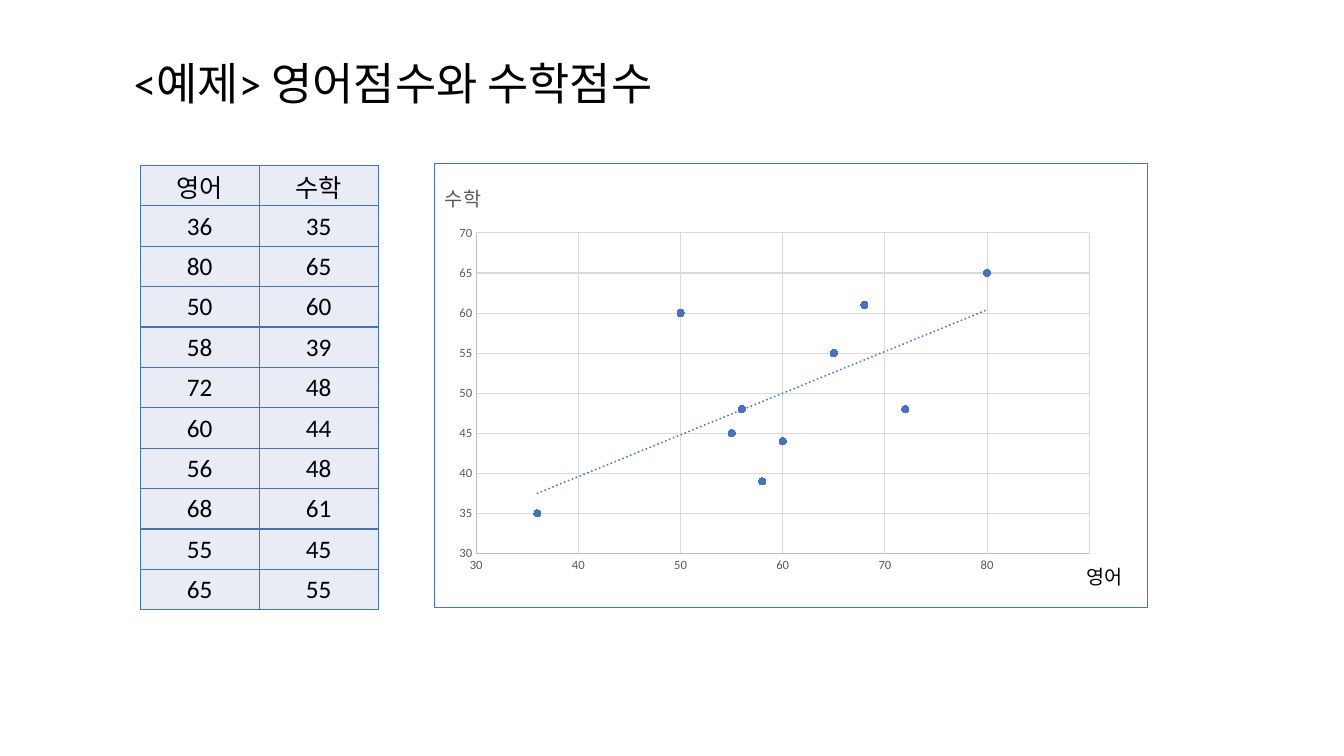
from lxml.etree import SubElement
from pptx import Presentation
from pptx.chart.data import XyChartData
from pptx.dml.color import RGBColor
from pptx.enum.chart import XL_CHART_TYPE, XL_MARKER_STYLE, XL_TICK_MARK
from pptx.enum.shapes import MSO_SHAPE
from pptx.enum.text import MSO_ANCHOR, PP_ALIGN
from pptx.oxml import parse_xml
from pptx.oxml.ns import nsdecls, qn
from pptx.util import Inches, Pt

COLORS = {"blue": "4472C4", "pale": "E9EBF5", "grid": "D9D9D9", "axis": "BFBFBF",
          "gray": "595959", "black": "000000", "white": "FFFFFF"}
HEADS = ["영어", "수학"]
SCORES = [(36, 35), (80, 65), (50, 60), (58, 39), (72, 48),
          (60, 44), (56, 48), (68, 61), (55, 45), (65, 55)]


def style(font, size, color="black", name="Calibri"):
    font.size, font.name, font.bold = Pt(size), name, False
    font.color.rgb = RGBColor.from_string(COLORS[color])


def place(parent, index, **sizes):
    """Give a chart part a manual layout, as fractions of the chart."""
    for old in parent.findall(qn("c:layout")):
        parent.remove(old)
    layout = parent.makeelement(qn("c:layout"))
    manual = SubElement(layout, qn("c:manualLayout"))
    if "w" in sizes:
        SubElement(manual, qn("c:layoutTarget")).set("val", "inner")
    for mode in ("xMode", "yMode"):
        SubElement(manual, qn(f"c:{mode}")).set("val", "edge")
    for key, value in sizes.items():
        SubElement(manual, qn(f"c:{key}")).set("val", str(value))
    parent.insert(index, layout)


deck = Presentation()
deck.slide_width, deck.slide_height = Inches(13.33), Inches(7.5)
slide = deck.slides.add_slide(deck.slide_layouts[6])
shapes = slide.shapes

# Title
frame = shapes.add_textbox(Inches(1.23), Inches(0.4), Inches(8.98), Inches(0.91)).text_frame
frame.word_wrap = True
frame.vertical_anchor = MSO_ANCHOR.MIDDLE
title = frame.paragraphs[0]
title.text = "<예제> 영어점수와 수학점수"
title.line_spacing = 0.9
style(title.font, 32)

# Score table
rows = [HEADS, *SCORES]
table = shapes.add_table(len(rows), 2, Inches(1.39), Inches(1.64),
                         Inches(2.36), Inches(4.41)).table
table.first_row = table.horz_banding = False
for row, values in enumerate(rows):
    for col, value in enumerate(values):
        cell = table.cell(row, col)
        cell.margin_left = cell.margin_right = cell.margin_top = Inches(0.01)
        cell.margin_bottom = 0
        cell.vertical_anchor = MSO_ANCHOR.MIDDLE
        para = cell.text_frame.paragraphs[0]
        para.text = str(value)
        para.alignment = PP_ALIGN.CENTER
        style(para.font, 18)
        props = cell._tc.get_or_add_tcPr()
        for side in "LRTB":
            edge = SubElement(props, qn(f"a:ln{side}"), w=str(Pt(1)))
            paint = SubElement(edge, qn("a:solidFill"))
            SubElement(paint, qn("a:srgbClr"), val=COLORS["blue"])
        cell.fill.solid()
        cell.fill.fore_color.rgb = RGBColor.from_string(COLORS["pale"])

# Scatter chart
data = XyChartData()
points = data.add_series("수학")
for english, math in SCORES:
    points.add_data_point(english, math)
chart = shapes.add_chart(XL_CHART_TYPE.XY_SCATTER, Inches(4.3), Inches(1.62),
                         Inches(7.09), Inches(4.41), data).chart
style(chart.font, 10)
chart.has_legend = False
chart.has_title = True
head = chart.chart_title.text_frame.paragraphs[0]
head.text = "수학"
style(head.font, 14, "gray")
place(chart.chart_title._element, 1, x=0.01, y=0.03)

plot = chart.plots[0]
plot.vary_by_categories = False
place(chart._chartSpace.chart.plotArea, 0, x=0.059, y=0.156, w=0.859, h=0.723)

for axis, top, step in ((chart.category_axis, 90, 10), (chart.value_axis, 70, 5)):
    axis.minimum_scale, axis.maximum_scale, axis.major_unit = 30, top, step
    axis.major_tick_mark = axis.minor_tick_mark = XL_TICK_MARK.NONE
    axis.has_major_gridlines = True
    style(axis.tick_labels.font, 9, "gray")
    for line, color in ((axis.format.line, "axis"), (axis.major_gridlines.format.line, "grid")):
        line.width = Pt(0.75)
        line.color.rgb = RGBColor.from_string(COLORS[color])

series = plot.series[0]
series.smooth = False
series.format.line.fill.background()
marker = series.marker
marker.style, marker.size = XL_MARKER_STYLE.CIRCLE, 5
marker.format.fill.solid()
marker.format.fill.fore_color.rgb = RGBColor.from_string(COLORS["blue"])
marker.format.line.color.rgb = RGBColor.from_string(COLORS["blue"])

# Trend line and chart border
stroke = f'<a:solidFill><a:srgbClr val="{COLORS["blue"]}"/></a:solidFill>'
trend = parse_xml(
    f'<c:trendline {nsdecls("c", "a")}><c:spPr><a:ln w="{Pt(1.5)}" cap="rnd">{stroke}'
    '<a:prstDash val="sysDot"/></a:ln></c:spPr><c:trendlineType val="linear"/>'
    '<c:dispRSqr val="0"/><c:dispEq val="0"/></c:trendline>')
series._element.find(qn("c:xVal")).addprevious(trend)
border = parse_xml(f'<c:spPr {nsdecls("c", "a")}><a:ln w="{Pt(0.75)}">{stroke}</a:ln></c:spPr>')
chart._chartSpace.chart.addnext(border)

# Label of the horizontal axis
label = shapes.add_shape(MSO_SHAPE.RECTANGLE, Inches(10.68), Inches(5.56),
                         Inches(0.59), Inches(0.34))
label.shadow.inherit = False
label.fill.solid()
label.fill.fore_color.rgb = RGBColor.from_string(COLORS["white"])
label.line.fill.background()
label.text_frame.word_wrap = False
label.text_frame.vertical_anchor = MSO_ANCHOR.TOP
para = label.text_frame.paragraphs[0]
para.text = "영어"
para.alignment = PP_ALIGN.LEFT
style(para.font, 14, name="Noto Sans CJK KR")

deck.save("out.pptx")
